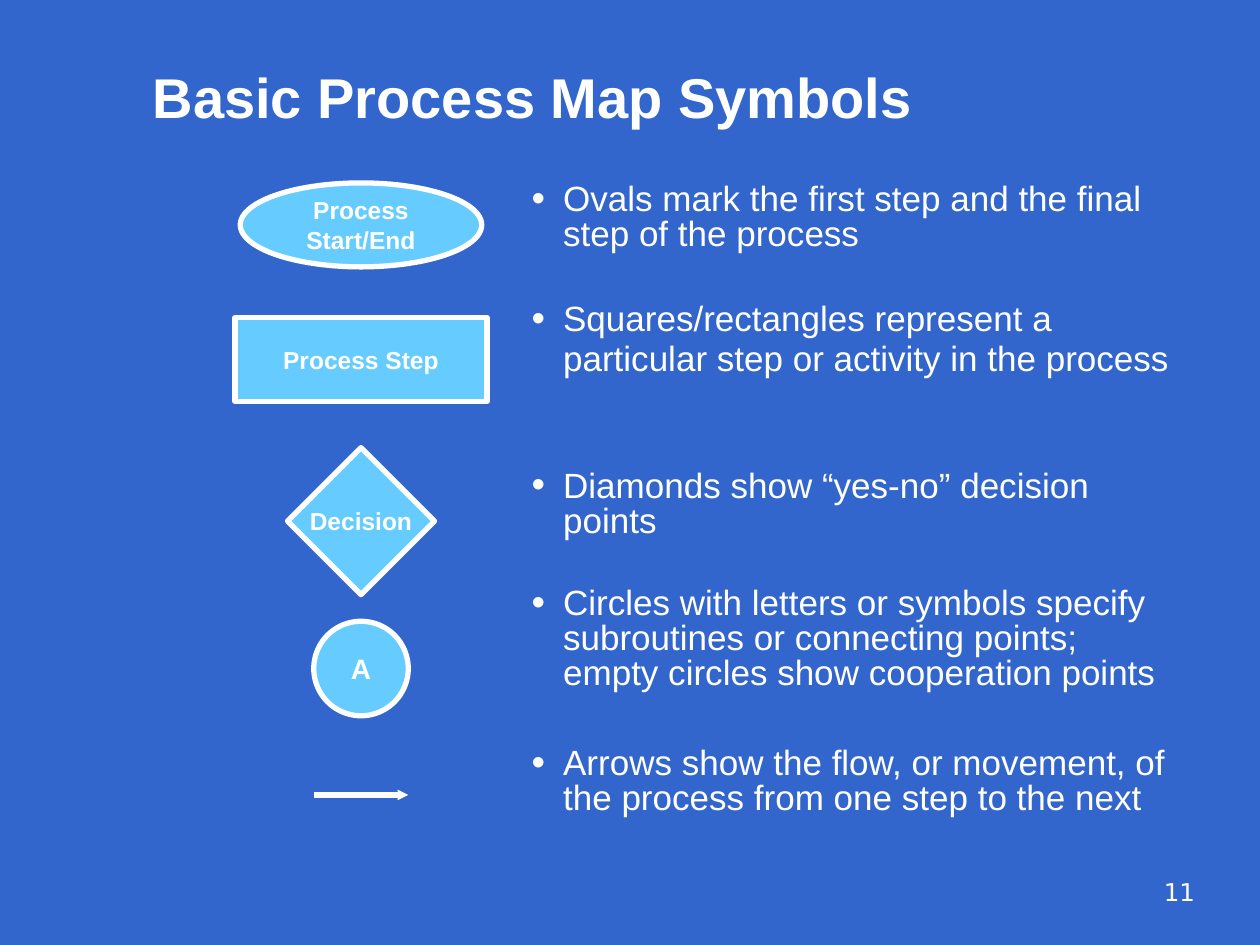
from dataclasses import dataclass

from lxml.etree import SubElement
from pptx import Presentation
from pptx.dml.color import RGBColor
from pptx.enum.shapes import MSO_CONNECTOR, MSO_SHAPE
from pptx.enum.text import MSO_ANCHOR, MSO_AUTO_SIZE, PP_ALIGN
from pptx.oxml.ns import qn
from pptx.slide import Slide
from pptx.util import Pt

BACKGROUND = "3366CC"
SYMBOL_FILL = "66CCFF"
WHITE = "FFFFFF"
SYMBOL_CENTER = 206.3
OUTLINE = 3


@dataclass(frozen=True)
class Symbol:
    kind: MSO_SHAPE
    label: str
    center_y: float
    width: float
    height: float
    size: float = 14
    wrap: bool = True


@dataclass(frozen=True)
class Bullet:
    text: str
    space_before: float = 0
    line_spacing: float = 0.83


SYMBOLS = [
    Symbol(MSO_SHAPE.OVAL, "Process Start/End", 128.5, 138, 48),
    Symbol(MSO_SHAPE.RECTANGLE, "Process Step", 205.5, 144, 48),
    Symbol(MSO_SHAPE.DIAMOND, "Decision", 297.8, 84, 84, wrap=False),
    Symbol(MSO_SHAPE.OVAL, "A", 382, 54, 54, size=16),
]

BULLETS = [
    Bullet("Ovals mark the first step and the final step of the process"),
    Bullet("Squares/rectangles represent a particular step or activity in the process", 26, 0.96),
    Bullet("Diamonds show “yes-no” decision points", 51.7),
    Bullet("Circles with letters or symbols specify subroutines or connecting points; "
           "empty circles show cooperation points", 27.4),
    Bullet("Arrows show the flow, or movement, of the process from one step to the next", 31.7),
]


def color(value: str) -> RGBColor:
    return RGBColor.from_string(value)


def style_font(paragraph, size: float, bold: bool = False, name: str = "Arial") -> None:
    font = paragraph.font
    font.name = name
    font.size = Pt(size)
    font.bold = bold
    font.color.rgb = color(WHITE)


def place(shape, left: float, top: float, width: float, height: float) -> None:
    shape.left, shape.top = Pt(left), Pt(top)
    shape.width, shape.height = Pt(width), Pt(height)


def add_title(slide: Slide, text: str) -> None:
    title = slide.shapes.title
    place(title, 80, 24, 612, 54)
    frame = title.text_frame
    frame.text = text
    frame.auto_size = MSO_AUTO_SIZE.NONE
    frame.vertical_anchor = MSO_ANCHOR.BOTTOM
    paragraph = frame.paragraphs[0]
    paragraph.alignment = PP_ALIGN.LEFT
    style_font(paragraph, 32, bold=True)


def add_symbol(slide: Slide, symbol: Symbol) -> None:
    shape = slide.shapes.add_shape(
        symbol.kind,
        Pt(SYMBOL_CENTER - symbol.width / 2), Pt(symbol.center_y - symbol.height / 2),
        Pt(symbol.width), Pt(symbol.height),
    )
    shape.shadow.inherit = False
    shape.fill.solid()
    shape.fill.fore_color.rgb = color(SYMBOL_FILL)
    shape.line.color.rgb = color(WHITE)
    shape.line.width = Pt(OUTLINE)
    frame = shape.text_frame
    frame.text = symbol.label
    frame.word_wrap = symbol.wrap
    frame.vertical_anchor = MSO_ANCHOR.MIDDLE
    frame.margin_top = frame.margin_bottom = Pt(0)
    paragraph = frame.paragraphs[0]
    paragraph.alignment = PP_ALIGN.CENTER
    style_font(paragraph, symbol.size, bold=True)


def add_flow_arrow(slide: Slide, center_y: float, length: float) -> None:
    arrow = slide.shapes.add_connector(
        MSO_CONNECTOR.STRAIGHT,
        Pt(SYMBOL_CENTER - length / 2), Pt(center_y),
        Pt(SYMBOL_CENTER + length / 2), Pt(center_y),
    )
    arrow.line.color.rgb = color(WHITE)
    arrow.line.width = Pt(OUTLINE)
    line = arrow.line._get_or_add_ln()
    SubElement(line, qn("a:tailEnd"), type="triangle", w="sm", len="sm")
    SubElement(arrow._element.spPr, qn("a:effectLst"))


def add_bullets(slide: Slide, bullets: list[Bullet]) -> None:
    body = slide.placeholders[1]
    place(body, 296.6, 101.5, 386.6, 387.4)
    frame = body.text_frame
    frame.auto_size = MSO_AUTO_SIZE.NONE
    frame.vertical_anchor = MSO_ANCHOR.TOP
    frame.text = "\n".join(bullet.text for bullet in bullets)
    for paragraph, bullet in zip(frame.paragraphs, bullets):
        paragraph.line_spacing = bullet.line_spacing
        paragraph.space_before = Pt(bullet.space_before)
        properties = paragraph._p.get_or_add_pPr()
        properties.set("marL", str(Pt(18)))
        properties.set("indent", str(Pt(-18)))
        bullet_color = SubElement(properties, qn("a:buClr"))
        SubElement(bullet_color, qn("a:srgbClr"), val=WHITE)
        SubElement(properties, qn("a:buSzPct"), val="110000")
        SubElement(properties, qn("a:buChar"), char="•")
        style_font(paragraph, 20)


def add_slide_number(slide: Slide, number: str) -> None:
    box = slide.shapes.add_textbox(Pt(540), Pt(497.5), Pt(150), Pt(36))
    frame = box.text_frame
    frame.word_wrap = True
    frame.text = number
    paragraph = frame.paragraphs[0]
    paragraph.alignment = PP_ALIGN.RIGHT
    style_font(paragraph, 14, name="DejaVu Sans")


def main() -> None:
    presentation = Presentation()
    presentation.slide_width, presentation.slide_height = Pt(720), Pt(540)
    slide = presentation.slides.add_slide(presentation.slide_layouts[1])
    slide.background.fill.solid()
    slide.background.fill.fore_color.rgb = color(BACKGROUND)
    add_title(slide, "Basic Process Map Symbols")
    for symbol in SYMBOLS:
        add_symbol(slide, symbol)
    add_flow_arrow(slide, 454.3, 54)
    add_bullets(slide, BULLETS)
    add_slide_number(slide, "11")
    presentation.save("out.pptx")


if __name__ == "__main__":
    main()
